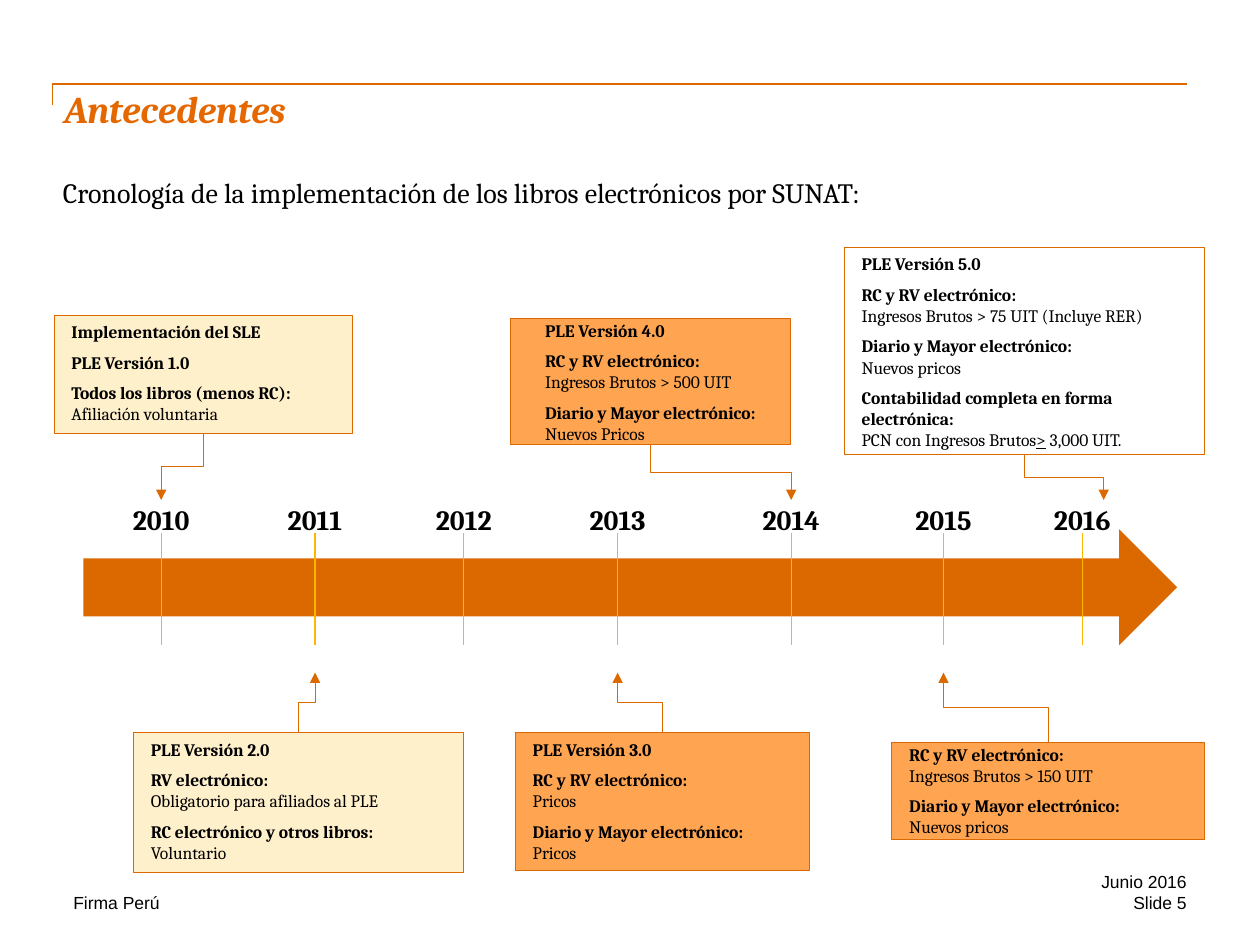
from lxml import etree
from pptx import Presentation, util as u
from pptx.dml.color import RGBColor
from pptx.enum import shapes, text
from pptx.oxml.ns import qn

HUES = {"rust": "DC6900", "title": "E56700", "gold": "FFB600",
        "cream": "FFF0CC", "peach": "FFA451", "black": "000000"}


def hue(name):
    return RGBColor.from_string(HUES[name])


def write(par, words, size=10, font="Cambria", color="black",
          bold=False, italic=False, line=False):
    """Add a run of formatted text to a paragraph."""
    run = par.add_run()
    run.text = words
    f = run.font
    f.size, f.name, f.bold, f.italic = u.Pt(size), font, bold, italic
    f.underline = line
    f.color.rgb = hue(color)


class Deck:
    def __init__(self):
        self.prs = Presentation()
        self.prs.slide_width, self.prs.slide_height = u.Cm(25.4), u.Cm(19.05)
        self.slide = self.prs.slides.add_slide(self.prs.slide_layouts[6])
        self.shapes = self.slide.shapes

    def frame(self, shape, pads, wrap=True):
        tf = shape.text_frame
        tf.word_wrap = wrap
        (tf.margin_left, tf.margin_top,
         tf.margin_right, tf.margin_bottom) = map(u.Cm, pads)
        return tf

    def label(self, area, words, align="LEFT", wrap=True, **look):
        box = self.shapes.add_textbox(*map(u.Cm, area))
        par = self.frame(box, (0, 0, 0, 0), wrap).paragraphs[0]
        par.alignment = getattr(text.PP_ALIGN, align)
        write(par, words, **look)

    def shape(self, kind, area, fill=None, edge=None):
        shp = self.shapes.add_shape(kind, *map(u.Cm, area))
        shp.shadow.inherit = False
        if fill:
            shp.fill.solid()
            shp.fill.fore_color.rgb = hue(fill)
        else:
            shp.fill.background()
        if edge:
            shp.line.color.rgb = hue(edge)
            shp.line.width = u.Pt(0.5)
        else:
            shp.line.fill.background()
        return shp

    def line(self, kind, ends, color, width):
        con = self.shapes.add_connector(kind, *map(u.Cm, ends))
        con.line.color.rgb = hue(color)
        con.line.width = u.Pt(width)
        etree.SubElement(con._element.spPr, qn("a:effectLst"))
        return con

    def link(self, x1, y1, x2, y2, width):
        """Elbow arrow that leaves and arrives vertically."""
        mx, my = (x1 + x2) / 2, (y1 + y2) / 2
        dx, dy = (x2 - x1) / 2, (y2 - y1) / 2
        turn = 90 if dx * dy < 0 else 270
        if turn == 270:
            dx, dy = -dx, -dy
        con = self.line(shapes.MSO_CONNECTOR.ELBOW,
                        (mx - dy, my + dx, mx + dy, my - dx), "rust", width)
        props = con._element.spPr
        props.find(qn("a:xfrm")).set("rot", str(turn * 60000))
        etree.SubElement(props.find(qn("a:ln")), qn("a:tailEnd"),
                         type="triangle")

    def corner(self, *points):
        pts = [(u.Cm(x), u.Cm(y)) for x, y in points]
        path = self.shapes.build_freeform(*pts[0])
        path.add_line_segments(pts[1:], close=False)
        shp = path.convert_to_shape()
        shp.shadow.inherit = False
        shp.fill.background()
        shp.line.color.rgb = hue("rust")
        shp.line.width = u.Pt(1)

    def tick(self, x, year):
        self.line(shapes.MSO_CONNECTOR.STRAIGHT, (x, 10.74, x, 13),
                  "gold", 0.75)
        self.label((x - 0.82, 10.13, 1.64, 0.71), year, "CENTER",
                   wrap=False, size=15.9, bold=True)

    def card(self, area, fill, notes, pad=0.35, mid=False):
        """Box of bold headings, each with an optional plain line."""
        shp = self.shape(shapes.MSO_SHAPE.RECTANGLE, area, fill, "rust")
        tf = self.frame(shp, (pad, 0.13, 0.1, 0.13))
        tf.vertical_anchor = (text.MSO_ANCHOR.MIDDLE if mid
                              else text.MSO_ANCHOR.TOP)
        par = None
        for note in notes:
            if par is not None:
                par.space_after = u.Pt(5.4)
            for row, words in enumerate(note):
                par = tf.add_paragraph() if par is not None else tf.paragraphs[0]
                par.alignment = text.PP_ALIGN.LEFT
                # Words between underscores are underlined
                for i, part in enumerate(words.split("_")):
                    write(par, part, bold=row == 0, line=i % 2 == 1)


BOTH, BOOKS = "RC y RV electrónico:", "Diario y Mayor electrónico:"

# Tick position and year
YEARS = zip((3.25, 6.35, 9.35, 12.45, 15.95, 19.02, 21.82),
            range(2010, 2017))

# Area, fill, arrow target x, arrow width, notes, extra format
CARDS = [
    ((1.09, 6.35, 6.02, 2.39), "cream", 3.25, 0.5,
     [("Implementación del SLE",), ("PLE Versión 1.0",),
      ("Todos los libros (menos RC):", "Afiliación voluntaria")], {}),
    ((10.29, 6.43, 5.64, 2.54), "peach", 15.95, 0.25,
     [("PLE Versión 4.0",), (BOTH, "Ingresos Brutos > 500 UIT"),
      (BOOKS, "Nuevos Pricos")], {"pad": 0.7, "mid": True}),
    ((17.02, 4.98, 7.26, 4.19), None, 22.25, 0.25,
     [("PLE Versión 5.0",),
      (BOTH, "Ingresos Brutos > 75 UIT (Incluye RER)"),
      (BOOKS, "Nuevos pricos"),
      ("Contabilidad completa en forma electrónica:",
       "PCN con Ingresos Brutos_>_ 3,000 UIT.")], {}),
    ((2.69, 14.76, 6.65, 2.82), "cream", 6.35, 0.25,
     [("PLE Versión 2.0",),
      ("RV electrónico:", "Obligatorio para afiliados al PLE"),
      ("RC electrónico y otros libros:", "Voluntario")], {}),
    ((10.39, 14.76, 5.92, 2.79), "peach", 12.45, 0.25,
     [("PLE Versión 3.0",), (BOTH, "Pricos"), (BOOKS, "Pricos")], {}),
    ((17.98, 14.96, 6.3, 1.96), "peach", 19.02, 0.25,
     [(BOTH, "Ingresos Brutos > 150 UIT"), (BOOKS, "Nuevos pricos")],
     {"mid": True}),
]


def main():
    deck = Deck()

    # Heading
    deck.corner((1.06, 2.12), (1.06, 1.69), (23.92, 1.69))
    deck.label((1.3, 1.73, 22.43, 1.47), "Antecedentes", size=21.6,
               color="title", bold=True, italic=True)
    deck.label((1.27, 3.53, 22.43, 1.19),
               "Cronología de la implementación de los libros "
               "electrónicos por SUNAT:", wrap=False, size=16)

    # Timeline
    deck.shape(shapes.MSO_SHAPE.RIGHT_ARROW, (1.68, 10.67, 22.05, 2.34),
               "rust")
    for x, year in YEARS:
        deck.tick(x, str(year))

    # Milestones
    for area, fill, goal, width, notes, more in CARDS:
        left, top, wide, high = area
        above = top < 10
        deck.link(left + wide / 2, top + high if above else top,
                  goal, 10.08 if above else 13.56, width)
        deck.card(area, fill, notes, **more)

    # Footer
    deck.label((1.48, 17.98, 7.2, 0.43), "Firma Perú", font="Arial")
    for y, words in ((17.56, "Junio 2016"), (17.98, "Slide 5")):
        deck.label((19.69, y, 4.23, 0.43), words, "RIGHT", font="Arial")

    deck.prs.save("out.pptx")


if __name__ == "__main__":
    main()
